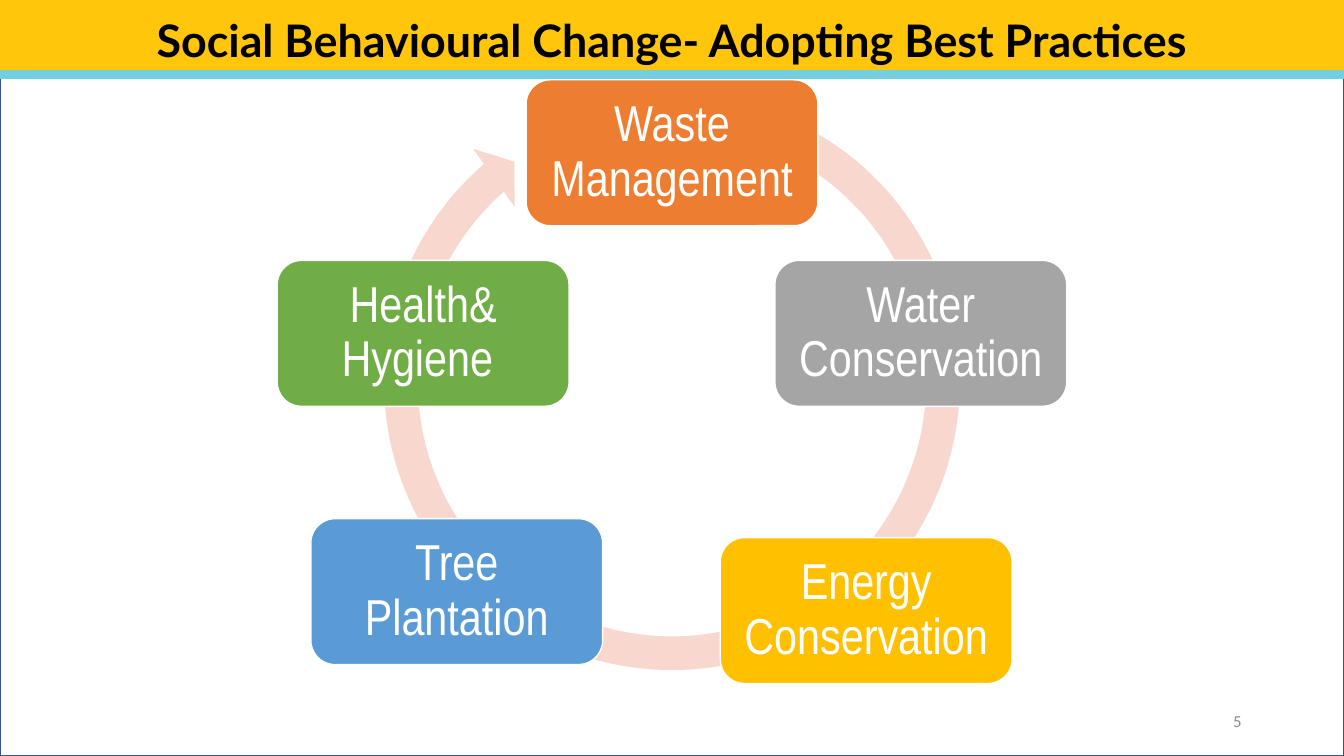
from lxml import etree
from pptx import Presentation
from pptx.dml.color import RGBColor
from pptx.enum.shapes import MSO_CONNECTOR, MSO_SHAPE
from pptx.enum.text import MSO_ANCHOR, PP_ALIGN
from pptx.oxml.ns import qn
from pptx.util import Pt

PX = 9525  # EMU per px, 96 px to the inch
SLIDE_W, SLIDE_H = 1280, 720
BOX_W, BOX_H, BOX_INSET = 278, 139, 14

BLACK = RGBColor(0x00, 0x00, 0x00)
WHITE = RGBColor(0xFF, 0xFF, 0xFF)
GREY_TEXT = RGBColor(0x8C, 0x8C, 0x8C)
FRAME_BLUE = RGBColor(0x32, 0x54, 0x91)
HEADER_YELLOW = RGBColor(0xFF, 0xC6, 0x0B)
RULE_CYAN = RGBColor(0x74, 0xCE, 0xE2)
RING_PINK = RGBColor(0xF8, 0xD7, 0xCE)
ORANGE = RGBColor(0xED, 0x7D, 0x31)
GREY = RGBColor(0xA5, 0xA5, 0xA5)
GOLD = RGBColor(0xFF, 0xC0, 0x00)
BLUE = RGBColor(0x5B, 0x9B, 0xD5)
GREEN = RGBColor(0x70, 0xAD, 0x47)

# Left, top, fill and wording, clockwise from the top
PRACTICES = [
    (501, 76, ORANGE, "Waste Management"),
    (738, 248, GREY, "Water Conservation"),
    (686, 512, GOLD, "Energy Conservation"),
    (296, 494, BLUE, "Tree Plantation"),
    (264, 248, GREEN, "Health& Hygiene "),
]


def emu(*lengths):
    return [n * PX for n in lengths]


def add_block(s, kind, box, fill=None, line=None):
    sp = s.shapes.add_shape(kind, *emu(*box))
    sp.shadow.inherit = False
    if fill is None:
        sp.fill.background()
    else:
        sp.fill.solid()
        sp.fill.fore_color.rgb = fill
    if line is None:
        sp.line.fill.background()
    else:
        sp.line.color.rgb = line
        sp.line.width = Pt(1)
    return sp


def set_text(sp, text, font, size, color, align=PP_ALIGN.CENTER,
             anchor=MSO_ANCHOR.MIDDLE, bold=False, spacing=0.9):
    tf = sp.text_frame
    tf.word_wrap = True
    tf.vertical_anchor = anchor
    p = tf.paragraphs[0]
    p.text = text
    p.alignment = align
    p.line_spacing = spacing
    p.font.name = font
    p.font.size = Pt(size)
    p.font.bold = bold
    p.font.color.rgb = color
    return tf


def add_rule(s, y, color, width):
    line = s.shapes.add_connector(MSO_CONNECTOR.STRAIGHT, *emu(0, y, SLIDE_W, y))
    line.line.color.rgb = color
    line.line.width = Pt(width)
    etree.SubElement(line._element.spPr, qn("a:effectLst"))


def add_ring(s):
    ring = add_block(s, MSO_SHAPE.CIRCULAR_ARROW, (348, 72, 584, 584), RING_PINK)
    for i, value in enumerate((0.055, 3.307, 137.359, 174.104, 0.058)):
        ring.adjustments[i] = value


def add_practice(s, x, y, fill, text):
    sp = add_block(s, MSO_SHAPE.ROUNDED_RECTANGLE, (x, y, BOX_W, BOX_H), fill, WHITE)
    tf = set_text(sp, text, "Arial Narrow", 36, WHITE)
    tf.margin_left = tf.margin_right = BOX_INSET * PX
    tf.margin_top = tf.margin_bottom = BOX_INSET * PX


def main():
    prs = Presentation()
    prs.slide_width, prs.slide_height = emu(SLIDE_W, SLIDE_H)
    s = prs.slides.add_slide(prs.slide_layouts[6])

    # Frame and header
    add_block(s, MSO_SHAPE.RECTANGLE, (0, 0, SLIDE_W, SLIDE_H), line=FRAME_BLUE)
    header = add_block(s, MSO_SHAPE.RECTANGLE, (0, 0, SLIDE_W, 69), HEADER_YELLOW)
    set_text(header, "Social Behavioural Change- Adopting Best Practices",
             "Lato", 32, BLACK, anchor=MSO_ANCHOR.BOTTOM, bold=True)

    # Slide number
    number = s.shapes.add_textbox(*emu(904, 667, 288, 38))
    set_text(number, "5", "Calibri", 12, GREY_TEXT, PP_ALIGN.RIGHT, spacing=1.0)

    add_rule(s, 71, RULE_CYAN, 6)

    # Cycle of practices
    add_ring(s)
    for practice in PRACTICES:
        add_practice(s, *practice)

    prs.save("out.pptx")


if __name__ == "__main__":
    main()
